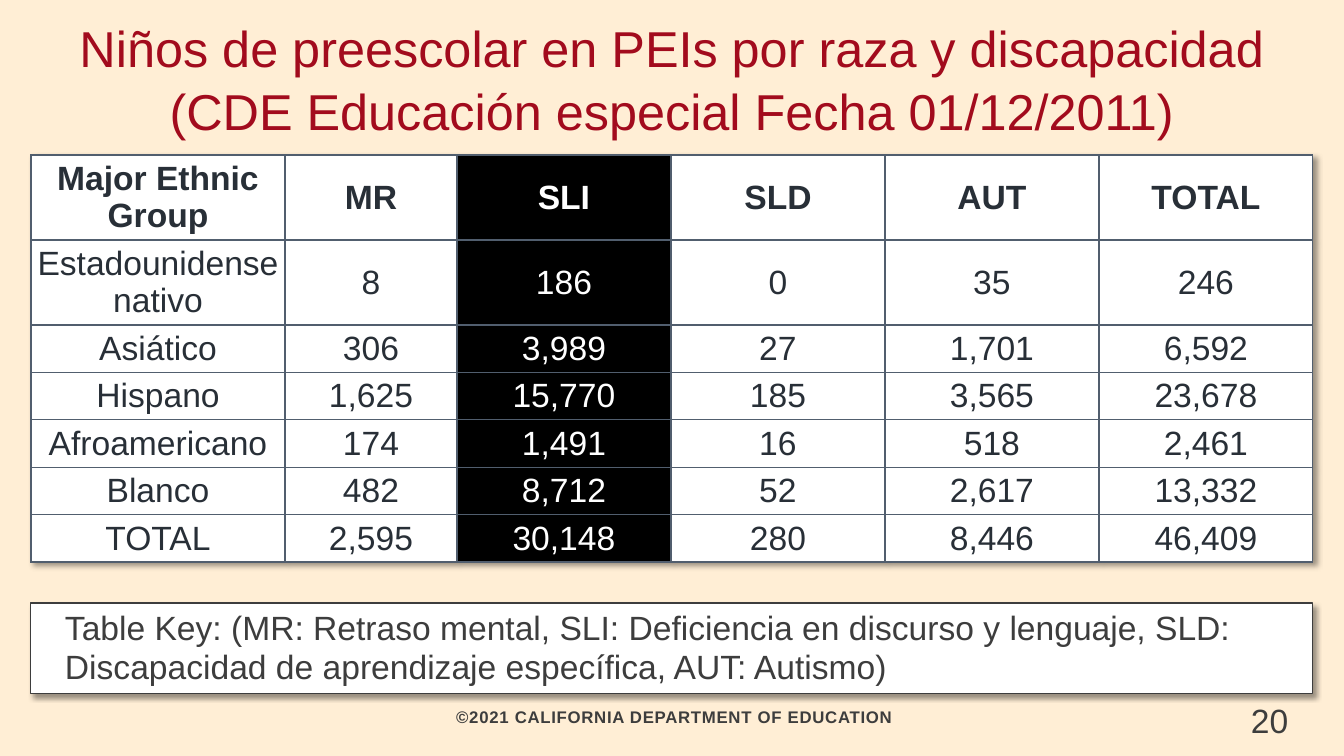
from pptx import Presentation
from pptx.dml.color import RGBColor
from pptx.enum.shapes import MSO_SHAPE
from pptx.enum.text import MSO_ANCHOR, MSO_AUTO_SIZE, PP_ALIGN
from pptx.oxml import parse_xml
from pptx.oxml.ns import nsdecls
from pptx.util import Pt

TITLE = "Niños de preescolar en PEIs por raza y discapacidad (CDE Educación especial Fecha 01/12/2011)"
COUNTS = [
    ("Major Ethnic Group", "MR", "SLI", "SLD", "AUT", "TOTAL"),
    ("Estadounidense nativo", "8", "186", "0", "35", "246"),
    ("Asiático", "306", "3,989", "27", "1,701", "6,592"),
    ("Hispano", "1,625", "15,770", "185", "3,565", "23,678"),
    ("Afroamericano", "174", "1,491", "16", "518", "2,461"),
    ("Blanco", "482", "8,712", "52", "2,617", "13,332"),
    ("TOTAL", "2,595", "30,148", "280", "8,446", "46,409"),
]
TABLE_KEY = ("Table Key: (MR: Retraso mental, SLI: Deficiencia en discurso y lenguaje, "
             "SLD: Discapacidad de aprendizaje específica, AUT: Autismo)")
COPYRIGHT = "©2021 CALIFORNIA DEPARTMENT OF EDUCATION"
PAGE = "20"

COLUMN_WIDTHS = [254, 172] + [214] * 4
ROW_HEIGHTS = [85] * 2 + [47] * 5
HIGHLIGHT = COUNTS[0].index("SLI")
LEFT, WIDTH, TABLE_TOP = 31, sum(COLUMN_WIDTHS), 155
CREAM, RED, GREY, SLATE = "FFEED5", "A20B1D", "3D3D3D", "282F37"
WHITE, BLACK, RULE = "FFFFFF", "000000", "515E6E"


def px(length):
    """Turn pixels into EMU."""
    return round(length * 914400 / 100.8)


def paint(fill, color):
    """Apply a solid colour."""
    fill.solid()
    fill.fore_color.rgb = RGBColor.from_string(color)


def write(frame, text, size=24, color=GREY, bold=False, align=PP_ALIGN.LEFT,
          anchor=MSO_ANCHOR.MIDDLE, leading=None, tracking=None):
    """Put one formatted paragraph into a text frame."""
    frame.word_wrap = True
    frame.vertical_anchor = anchor
    paragraph = frame.paragraphs[0]
    paragraph.alignment = align
    if leading:
        paragraph.line_spacing = leading
    run = paragraph.add_run()
    run.text = text
    font = run.font
    font.name, font.size, font.bold = "Arial", Pt(size), bold
    font.color.rgb = RGBColor.from_string(color)
    if tracking:
        font._element.set("spc", str(tracking))


def shadow():
    """Return the soft shadow shared by the table and its key."""
    return parse_xml(
        f'<a:effectLst {nsdecls("a")}><a:outerShdw blurRad="{Pt(4)}" dist="{Pt(3)}" '
        f'dir="2700000" algn="tl" rotWithShape="0"><a:srgbClr val="{BLACK}">'
        '<a:alpha val="40000"/></a:srgbClr></a:outerShdw></a:effectLst>')


def rule_cell(cell):
    """Draw the four borders of a cell."""
    properties = cell._tc.get_or_add_tcPr()
    for position, side in enumerate(("lnL", "lnR", "lnT", "lnB")):
        properties.insert(position, parse_xml(
            f'<a:{side} {nsdecls("a")} w="{Pt(1)}"><a:solidFill>'
            f'<a:srgbClr val="{RULE}"/></a:solidFill></a:{side}>'))


def add_title(slide):
    """Place and fill the title."""
    title = slide.shapes.title
    title.left, title.top, title.width, title.height = px(LEFT), 0, px(WIDTH), px(155)
    write(title.text_frame, TITLE, size=36, color=RED, align=PP_ALIGN.CENTER, leading=Pt(45))
    title.text_frame.auto_size = MSO_AUTO_SIZE.NONE


def add_counts(slide):
    """Build the table of counts."""
    table = slide.shapes.add_table(
        len(COUNTS), len(COLUMN_WIDTHS), px(LEFT), px(TABLE_TOP),
        px(WIDTH), px(sum(ROW_HEIGHTS))).table
    table.horz_banding = False
    table._tbl.tblPr.insert(0, shadow())
    for column, width in zip(table.columns, COLUMN_WIDTHS):
        column.width = px(width)
    for r, (counts, height) in enumerate(zip(COUNTS, ROW_HEIGHTS)):
        table.rows[r].height = px(height)
        for c, count in enumerate(counts):
            cell = table.cell(r, c)
            cell.margin_left = cell.margin_right = px(5)
            cell.margin_top = cell.margin_bottom = px(5)
            cell.vertical_anchor = MSO_ANCHOR.MIDDLE
            highlighted = c == HIGHLIGHT
            paint(cell.fill, BLACK if highlighted else WHITE)
            rule_cell(cell)
            write(cell.text_frame, count, color=WHITE if highlighted else SLATE,
                  bold=r == 0, align=PP_ALIGN.CENTER)


def add_key(slide):
    """Add the boxed table key."""
    key = slide.shapes.add_shape(MSO_SHAPE.RECTANGLE, px(LEFT), px(603), px(WIDTH), px(91))
    paint(key.fill, WHITE)
    paint(key.line.fill, GREY)
    key.line.width = Pt(0.75)
    key._element.spPr.append(shadow())
    key.text_frame.margin_left = px(34)
    write(key.text_frame, TABLE_KEY, leading=0.96)


def add_label(slide, text, left, top, width, height, **style):
    """Add a plain line of text."""
    label = slide.shapes.add_textbox(px(left), px(top), px(width), px(height))
    write(label.text_frame, text, **style)


def main():
    """Build and save the slide."""
    presentation = Presentation()
    presentation.slide_width, presentation.slide_height = px(1344), px(756)
    slide = presentation.slides.add_slide(presentation.slide_layouts[5])
    paint(slide.background.fill, CREAM)
    add_title(slide)
    add_counts(slide)
    add_key(slide)
    add_label(slide, COPYRIGHT, 106, 702, 1137, 29, size=12, bold=True,
              align=PP_ALIGN.CENTER, tracking=50)
    add_label(slide, PAGE, 1241, 695, 103, 47, anchor=MSO_ANCHOR.TOP)
    presentation.save("out.pptx")


if __name__ == "__main__":
    main()
